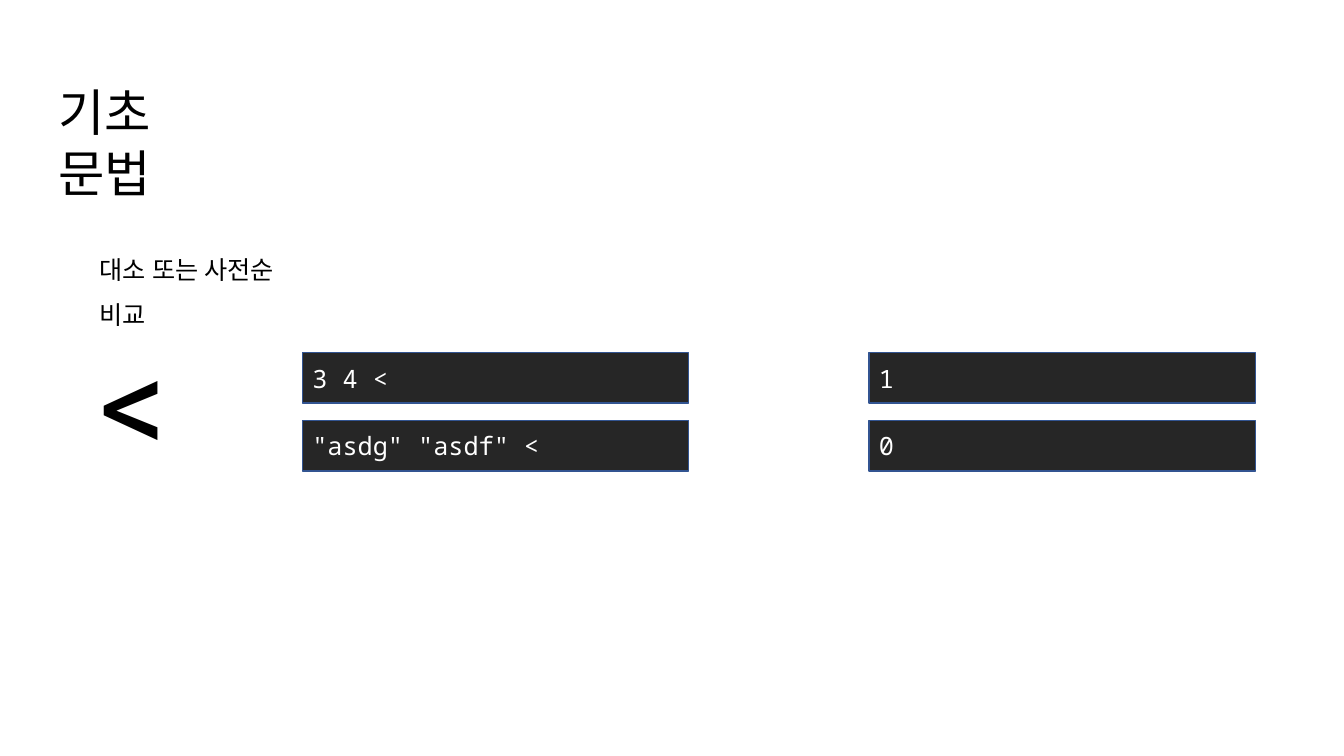
from lxml import etree
from pptx import Presentation
from pptx.dml.color import RGBColor
from pptx.enum.shapes import MSO_SHAPE
from pptx.enum.text import MSO_ANCHOR, MSO_AUTO_SIZE, PP_ALIGN
from pptx.oxml.ns import qn
from pptx.util import Pt

RECT = MSO_SHAPE.RECTANGLE
LEFT = PP_ALIGN.LEFT
TOP, MIDDLE = MSO_ANCHOR.TOP, MSO_ANCHOR.MIDDLE
GROW = MSO_AUTO_SIZE.SHAPE_TO_FIT_TEXT

THEME = {
    "text": "000000", "code": "FFFFFF", "fill": "262626", "line": "325491",
    "text_font": "Roboto", "code_font": "Noto Sans Mono",
    "title_size": 36, "symbol_size": 96, "body_size": 18,
}

# text, (left, top, width, height), size, line spacing
LABELS = [
    ("기초 문법", (34.56, 54.72, 144, 51), THEME["title_size"], 1.0),
    ("<", (64, 167, 71.3, 160), THEME["symbol_size"], 1.5),
    ("대소 또는 사전순 비교", (64, 167, 162.7, 36), THEME["body_size"], 1.5),
]
# code, result
EXAMPLES = [("3 4 <", "1"), ('"asdg" "asdf" <', "0")]

COLUMN_LEFTS = (216, 620.64)
FIRST_ROW, ROW_STEP = 252, 48.4
BOX_W, BOX_H = 276, 36


def color(name):
    return RGBColor.from_string(THEME[name])


def set_text(sp, text, kind, size, anchor, spacing=1.0):
    tf = sp.text_frame
    tf.word_wrap = True
    tf.vertical_anchor = anchor
    p = tf.paragraphs[0]
    p.text = text
    p.alignment = LEFT
    p.line_spacing = spacing
    p.font.size = Pt(size)
    p.font.color.rgb = color(kind)
    p.font.name = THEME[kind + "_font"]
    # Hangul takes its font from the East Asian slot.
    for latin in list(p._p.iter(qn("a:latin"))):
        ea = etree.Element(qn("a:ea"), typeface=p.font.name)
        latin.addnext(ea)


def add_label(slide, text, box, size, spacing):
    sp = slide.shapes.add_textbox(*map(Pt, box))
    set_text(sp, text, "text", size, TOP, spacing)
    sp.text_frame.auto_size = GROW


def add_code_box(slide, text, left, top):
    sp = slide.shapes.add_shape(RECT, Pt(left), Pt(top), Pt(BOX_W), Pt(BOX_H))
    sp.shadow.inherit = False
    sp.fill.solid()
    sp.fill.fore_color.rgb = color("fill")
    sp.line.color.rgb = color("line")
    sp.line.width = Pt(1)
    set_text(sp, text, "code", THEME["body_size"], MIDDLE)


def main():
    prs = Presentation()
    prs.slide_width, prs.slide_height = Pt(960), Pt(540)
    slide = prs.slides.add_slide(prs.slide_layouts[6])
    for label in LABELS:
        add_label(slide, *label)
    for row, example in enumerate(EXAMPLES):
        for left, text in zip(COLUMN_LEFTS, example):
            add_code_box(slide, text, left, FIRST_ROW + row * ROW_STEP)
    prs.save("out.pptx")


if __name__ == "__main__":
    main()
